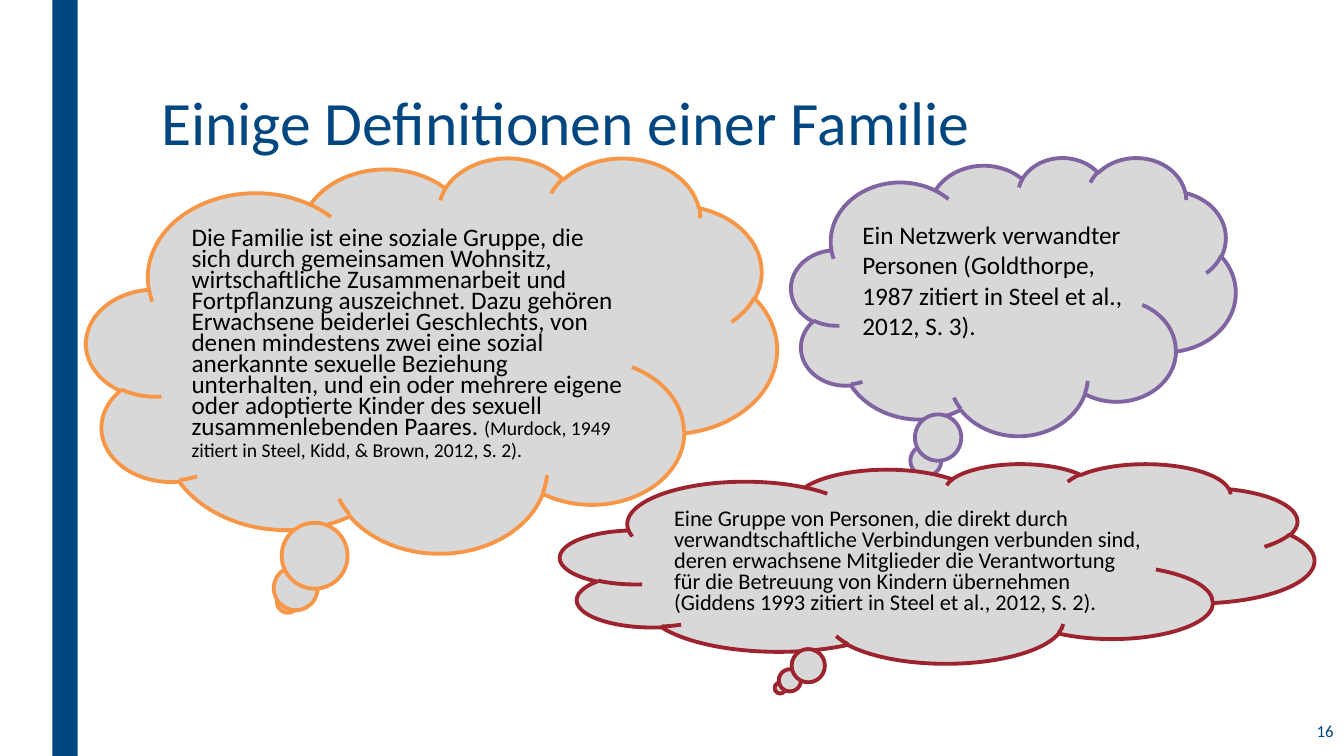
from pptx import Presentation
from pptx.dml.color import RGBColor
from pptx.enum.shapes import MSO_SHAPE
from pptx.enum.text import MSO_ANCHOR, MSO_AUTO_SIZE, PP_ALIGN
from pptx.util import Cm, Pt

RECTANGLE = MSO_SHAPE.RECTANGLE
CLOUD = MSO_SHAPE.CLOUD_CALLOUT
TOP, MIDDLE = MSO_ANCHOR.TOP, MSO_ANCHOR.MIDDLE
LEFT, RIGHT = PP_ALIGN.LEFT, PP_ALIGN.RIGHT
NO_AUTOFIT = MSO_AUTO_SIZE.NONE

BLUE = RGBColor(0x00, 0x46, 0x80)
GREY = RGBColor(0xD8, 0xD8, 0xD8)
BLACK = RGBColor(0x00, 0x00, 0x00)
ORANGE = RGBColor(0xF7, 0x96, 0x46)
PURPLE = RGBColor(0x80, 0x64, 0xA2)
RED = RGBColor(0x9D, 0x23, 0x2F)

SLIDE_WIDTH, SLIDE_HEIGHT = 33.87, 19.05


class SlideBuilder:
    font_name = "Calibri"
    outline_width = Pt(2.75)

    def __init__(self, slide):
        self.slide = slide

    def add_text(self, shape, runs, color, alignment, anchor, line_spacing=1.0):
        frame = shape.text_frame
        frame.word_wrap = True
        frame.auto_size = NO_AUTOFIT
        frame.vertical_anchor = anchor
        paragraph = frame.paragraphs[0]
        paragraph.alignment = alignment
        paragraph.line_spacing = line_spacing
        for text, size in runs:
            run = paragraph.add_run()
            run.text = text
            run.font.name = self.font_name
            run.font.size = Pt(size)
            run.font.color.rgb = color
        return frame

    def bar(self, left, top, width, height):
        shape = self.slide.shapes.add_shape(
            RECTANGLE, Cm(left), Cm(top), Cm(width), Cm(height))
        shape.shadow.inherit = False
        shape.fill.solid()
        shape.fill.fore_color.rgb = BLUE
        shape.line.fill.background()

    def title(self, text, left, top, width, height):
        shape = self.slide.shapes.title
        shape.left, shape.top = Cm(left), Cm(top)
        shape.width, shape.height = Cm(width), Cm(height)
        frame = self.add_text(shape, [(text, 44)], BLUE, LEFT, TOP, 0.89)
        frame.margin_top = Cm(0.43)

    def slide_number(self, text, left, top, width, height):
        shape = self.slide.shapes.add_textbox(
            Cm(left), Cm(top), Cm(width), Cm(height))
        self.add_text(shape, [(text, 12)], BLUE, RIGHT, MIDDLE)

    def cloud(self, runs, outline, box, line_spacing, margin_top=0.13,
              margin_bottom=0.13):
        shape = self.slide.shapes.add_shape(CLOUD, *map(Cm, box))
        shape.shadow.inherit = False
        shape.fill.solid()
        shape.fill.fore_color.rgb = GREY
        shape.line.color.rgb = outline
        shape.line.width = self.outline_width
        frame = self.add_text(shape, runs, BLACK, LEFT, MIDDLE, line_spacing)
        frame.margin_top = Cm(margin_top)
        frame.margin_bottom = Cm(margin_bottom)


def main():
    presentation = Presentation()
    presentation.slide_width = Cm(SLIDE_WIDTH)
    presentation.slide_height = Cm(SLIDE_HEIGHT)
    title_only = presentation.slide_layouts[5]
    builder = SlideBuilder(presentation.slides.add_slide(title_only))

    builder.bar(1.32, 0, 0.64, SLIDE_HEIGHT)
    builder.title("Einige Definitionen einer Familie", 3.81, 1.9, 26.67, 4.11)
    builder.slide_number("16", 29.41, 17.86, 4.45, 1.12)

    builder.cloud(
        [("Die Familie ist eine soziale Gruppe, die sich durch gemeinsamen "
          "Wohnsitz, wirtschaftliche Zusammenarbeit und Fortpflanzung "
          "auszeichnet. Dazu gehören Erwachsene beiderlei Geschlechts, von "
          "denen mindestens zwei eine sozial anerkannte sexuelle Beziehung "
          "unterhalten, und ein oder mehrere eigene oder adoptierte Kinder "
          "des sexuell zusammenlebenden Paares. ", 18),
         ("(Murdock, 1949 zitiert in Steel, Kidd, & Brown, 2012, S. 2).", 14)],
        ORANGE, (2.18, 3.96, 17.4, 9.96), Pt(15))
    builder.cloud(
        [("Ein Netzwerk verwandter Personen (Goldthorpe, 1987 zitiert in "
          "Steel et al., 2012, S. 3).", 18)],
        PURPLE, (19.94, 3.96, 11.2, 7.01), 1.0, margin_bottom=0.63)
    builder.cloud(
        [("Eine Gruppe von Personen, die direkt durch verwandtschaftliche "
          "Verbindungen verbunden sind, deren erwachsene Mitglieder die "
          "Verantwortung für die Betreuung von Kindern übernehmen (Giddens "
          "1993 zitiert in Steel et al., 2012, S. 2).", 16)],
        RED, (14.12, 11.68, 19, 5.03), Pt(15), margin_top=0.33)

    presentation.save("out.pptx")


if __name__ == "__main__":
    main()
